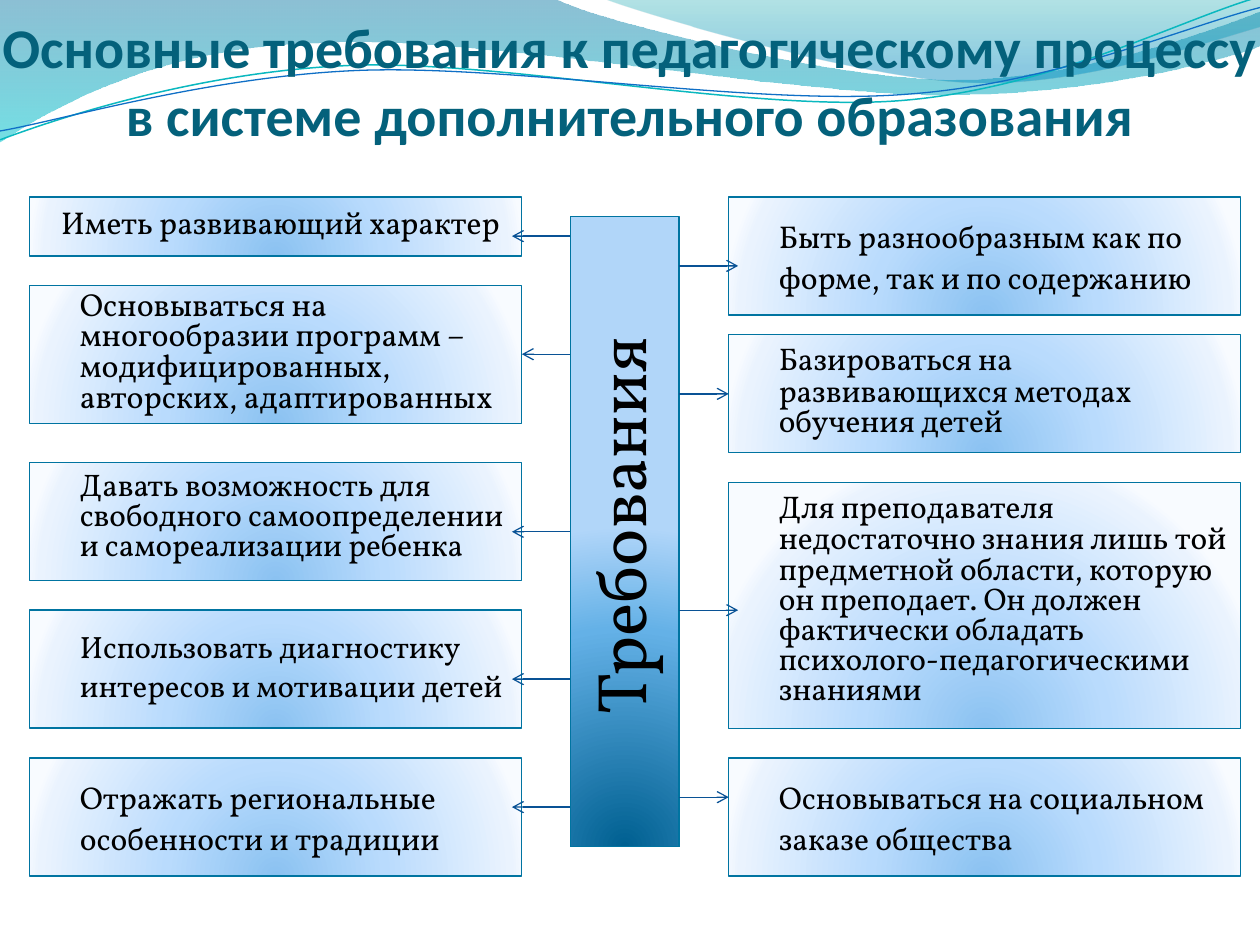
"""Build the slide on requirements for the teaching process in supplementary education."""
from dataclasses import dataclass
from math import cos, radians, sin

from lxml import etree
from pptx import Presentation
from pptx.dml.color import RGBColor
from pptx.enum.shapes import MSO_CONNECTOR, MSO_SHAPE
from pptx.enum.text import MSO_ANCHOR, MSO_AUTO_SIZE, PP_ALIGN
from pptx.oxml import parse_xml
from pptx.oxml.ns import nsdecls, qn
from pptx.util import Cm, Pt

RECT, STRAIGHT = MSO_SHAPE.RECTANGLE, MSO_CONNECTOR.STRAIGHT
TOP, BOTTOM, CENTER, LEFT = MSO_ANCHOR.TOP, MSO_ANCHOR.BOTTOM, PP_ALIGN.CENTER, PP_ALIGN.LEFT
NO_FIT = MSO_AUTO_SIZE.NONE


@dataclass(frozen=True)
class Theme:
    title_font: str = "Calibri"
    body_font: str = "Vollkorn"
    title_color: str = "04617B"
    text_color: str = "000000"
    border: str = "0074A1"
    arrow: str = "095295"
    thin: float = 0.75
    title_size: float = 32
    hub_size: float = 40
    card_stops: tuple = ((0, "8BC2F1", 100), (43, "B9DBFD", 100), (93, "EAF3FE", 100), (100, "F8FBFF", 100))
    hub_stops: tuple = ((0, "006091", 100), (68, "64B1E7", 100), (100, "B1D6F9", 100))


THEME = Theme()
TITLE = "Основные требования к педагогическому процессу в системе дополнительного образования"
HUB = "Требования"
FIRST_CARD = (3.97, 1.19, 18, None, 1, "Иметь развивающий характер")
LEFT_CARDS = [
    (5.76, 2.78, 18.2, 18.2, 0.8, "Основываться на многообразии программ – модифицированных, авторских, адаптированных"),
    (9.33, 2.38, 17.8, 20.1, 0.8, "Давать возможность для свободного самоопределении и самореализации ребенка"),
    (12.3, 2.38, 17.6, 24.1, 1, "Использовать диагностику интересов и мотивации детей"),
    (15.28, 2.38, 18, 26, 1, "Отражать региональные особенности и традиции"),
]
RIGHT_CARDS = [
    (3.97, 2.38, 18, 26, 1, "Быть разнообразным как по форме, так и по содержанию"),
    (6.75, 2.38, 17.9, 22.1, 0.8, "Базироваться на развивающихся методах обучения детей"),
    (9.73, 4.96, 17.9, 22.1, 0.8, "Для преподавателя недостаточно знания лишь той предметной области, которую он "
     "преподает. Он должен фактически обладать психолого-педагогическими знаниями"),
    (15.28, 2.38, 18, 26, 1, "Основываться на социальном заказе общества"),
]
LEFT_COLUMN, RIGHT_COLUMN = (0.6, 9.92), (14.69, 10.32)
HUB_LEFT, HUB_TOP, HUB_WIDTH, HUB_HEIGHT = 11.5, 4.36, 2.19, 12.7
LEFT_ARROWS = [(4.76, 10.32), (7.14, 10.52), (10.72, 10.32), (13.69, 10.32), (16.27, 10.32)]
RIGHT_ARROWS = [(5.36, 14.88), (7.94, 14.69), (12.3, 14.88), (16.07, 14.69)]

WAVE_UNIT, WAVE_TILT = 2.54, 357.3
FILLED_WAVES = [
    ([(0, 0), (4.4, -0.01), (4.76, 0.17, 6.64, 0.63, 7.58, 0.63), (8.53, 0.63, 9.58, 0.26, 10, 0.09),
      (10.01, 0.36), (9.83, 0.44, 8.7, 0.76, 7.46, 0.75), (6.22, 0.75, 3.82, 0.28, 2.57, 0.34),
      (1.29, 0.36, 0.46, 0.83, -0.01, 1.13)],
     ((0, "0074A1", 45), (100, "00C6CF", 55))),
    ([(4.79, -0.01), (5.09, 0.11, 6.82, 0.62, 7.69, 0.65), (8.56, 0.69, 9.61, 0.32, 10, 0.21), (10, 0)],
     ((0, "00A1A9", 30), (80, "008BBF", 45))),
]
LINE_WAVES = [
    ([(0, 1.11), (0.48, 0.93, 1.58, 0.57, 2.77, 0.52), (3.95, 0.47, 5.93, 0.89, 7.13, 0.8),
      (8.33, 0.71, 9.38, 0.15, 9.98, -0.02)], (4.99, 0.58), "0AB8BF", 0.85),
    ([(0, 1.04), (0.47, 0.96, 1.64, 0.61, 2.83, 0.56), (4.03, 0.51, 5.97, 0.84, 7.17, 0.75),
      (8.36, 0.67, 9.41, 0.21, 10, 0.06)], (5, 0.59), "0F6FC6", 0.75),
]


def rgb(color):
    return RGBColor.from_string(color)


def place(shape, left, top, width, height):
    shape.left, shape.top, shape.width, shape.height = Cm(left), Cm(top), Cm(width), Cm(height)


def outline(shape, color, width):
    shape.line.color.rgb = rgb(color)
    shape.line.width = Pt(width)


def paint_gradient(shape, stops, radial):
    shape.fill.gradient()
    old = shape._element.spPr.find(qn("a:gradFill"))
    stop_xml = "".join(
        f'<a:gs pos="{pos * 1000}"><a:srgbClr val="{color}"><a:alpha val="{alpha * 1000}"/></a:srgbClr></a:gs>'
        for pos, color, alpha in stops)
    direction = ('<a:path path="circle"><a:fillToRect l="50000" t="130000" r="50000" b="-30000"/></a:path>'
                 if radial else '<a:lin ang="5400000" scaled="0"/>')
    old.getparent().replace(old, parse_xml(
        f'<a:gradFill {nsdecls("a")} rotWithShape="0"><a:gsLst>{stop_xml}</a:gsLst>{direction}</a:gradFill>'))


def add_run(paragraph, text, size, color, font, bold=False):
    run = paragraph.add_run()
    run.text = text
    run.font.size, run.font.name, run.font.bold = Pt(size), font, bold
    run.font.color.rgb = rgb(color)


def prepare_text(shape, anchor, align):
    frame = shape.text_frame
    frame.word_wrap, frame.auto_size, frame.vertical_anchor = True, NO_FIT, anchor
    paragraph = frame.paragraphs[0]
    paragraph.alignment, paragraph.space_before = align, Pt(0)
    return paragraph


def untilt(x, y, center):
    angle, dx, dy = radians(-WAVE_TILT), x - center[0], y - center[1]
    return (center[0] + dx * cos(angle) - dy * sin(angle),
            center[1] + dx * sin(angle) + dy * cos(angle))


def add_wave(slide, segments, center=None):
    curves = []
    for segment in segments:
        pairs = list(zip(segment[::2], segment[1::2]))
        if center:
            pairs = [untilt(x, y, center) for x, y in pairs]
        curves.append([(Cm(x * WAVE_UNIT), Cm(y * WAVE_UNIT)) for x, y in pairs])
    builder = slide.shapes.build_freeform(*curves[0][0])
    builder.add_line_segments([curve[-1] for curve in curves[1:]], close=center is None)
    wave = builder.convert_to_shape()
    wave.shadow.inherit = False
    straight = list(wave._element.iter(qn("a:lnTo")))
    for line, curve in zip(straight, curves[1:]):
        if len(curve) == 3:
            points = "".join(f'<a:pt x="{x - wave.left}" y="{y - wave.top}"/>' for x, y in curve)
            line.getparent().replace(line, parse_xml(
                f'<a:cubicBezTo {nsdecls("a")}>{points}</a:cubicBezTo>'))
    if center:
        wave.rotation = WAVE_TILT
    return wave


def fill_card(card, column, top, height, size, tab_size, spacing, text):
    place(card, column[0], top, column[1], height)
    paint_gradient(card, THEME.card_stops, True)
    outline(card, THEME.border, THEME.thin)
    paragraph = prepare_text(card, TOP, LEFT)
    properties = paragraph._p.get_or_add_pPr()
    properties.set("marL", str(Cm(0.76)))
    properties.set("indent", str(Cm(-0.76 if tab_size else -0.38)))
    etree.SubElement(properties, qn("a:buNone"))
    paragraph.line_spacing = spacing
    if tab_size:
        add_run(paragraph, "\t", tab_size, THEME.text_color, THEME.body_font)
    add_run(paragraph, text, size, THEME.text_color, THEME.body_font)


def add_rectangle(slide):
    shape = slide.shapes.add_shape(RECT, 0, 0, Cm(1), Cm(1))
    shape.shadow.inherit = False
    return shape


def add_hub(slide):
    hub = add_rectangle(slide)
    shift = (HUB_HEIGHT - HUB_WIDTH) / 2
    place(hub, HUB_LEFT - shift, HUB_TOP + shift, HUB_HEIGHT, HUB_WIDTH)
    hub.rotation = 270
    paint_gradient(hub, THEME.hub_stops, True)
    outline(hub, THEME.border, THEME.thin)
    add_run(prepare_text(hub, TOP, CENTER), HUB, THEME.hub_size, THEME.text_color, THEME.body_font)
    hub.text_frame.margin_left = Cm(0.48)


def add_arrow(slide, start, tip, y):
    arrow = slide.shapes.add_connector(STRAIGHT, Cm(start), Cm(y), Cm(tip), Cm(y))
    outline(arrow, THEME.arrow, THEME.thin)
    etree.SubElement(arrow.line._get_or_add_ln(), qn("a:tailEnd"), type="arrow")
    etree.SubElement(arrow._element.spPr, qn("a:effectLst"))


def add_master_waves(deck, slide):
    waves = []
    for segments, stops in FILLED_WAVES:
        wave = add_wave(slide, segments)
        paint_gradient(wave, stops, False)
        wave.line.fill.background()
        waves.append(wave)
    for segments, center, color, width in LINE_WAVES:
        wave = add_wave(slide, segments, center)
        wave.fill.background()
        outline(wave, color, width)
        waves.append(wave)
    for order, wave in enumerate(waves):
        wave._element.nvSpPr.cNvPr.set("id", str(100 + order))
        deck.slide_master.shapes._spTree.insert(2 + order, wave._element)


def main():
    deck = Presentation()
    deck.slide_width, deck.slide_height = Cm(25.4), Cm(19.05)
    slide = deck.slides.add_slide(deck.slide_layouts[1])
    title, first_card = slide.placeholders
    add_master_waves(deck, slide)

    place(title, 0, 0, 25.4, 2.97)
    heading = prepare_text(title, BOTTOM, CENTER)
    frame = title.text_frame
    frame.margin_left = frame.margin_right = frame.margin_bottom = 0
    add_run(heading, TITLE, THEME.title_size, THEME.title_color, THEME.title_font, True)

    fill_card(first_card, LEFT_COLUMN, *FIRST_CARD)
    for column, cards in ((LEFT_COLUMN, LEFT_CARDS), (RIGHT_COLUMN, RIGHT_CARDS)):
        for card in cards:
            fill_card(add_rectangle(slide), column, *card)
    add_hub(slide)
    for start, arrows in ((HUB_LEFT + HUB_WIDTH, RIGHT_ARROWS), (HUB_LEFT, LEFT_ARROWS)):
        for y, tip in arrows:
            add_arrow(slide, start, tip, y)
    deck.save("out.pptx")


if __name__ == "__main__":
    main()
